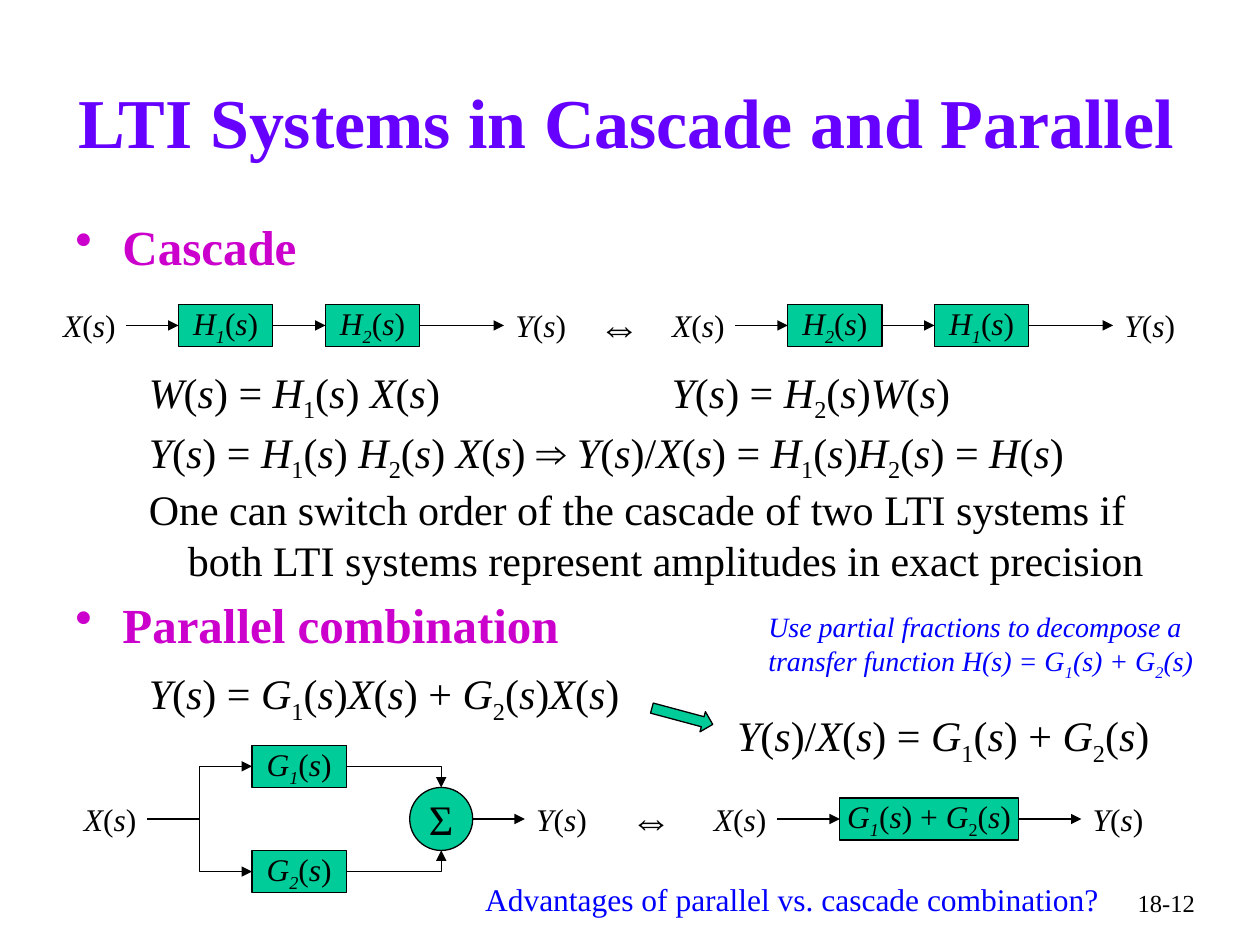
from dataclasses import dataclass
from itertools import groupby

from lxml import etree
from pptx import Presentation
from pptx.dml.color import RGBColor
from pptx.enum.shapes import MSO_CONNECTOR, MSO_SHAPE
from pptx.enum.text import MSO_ANCHOR, PP_ALIGN
from pptx.oxml.ns import qn
from pptx.util import Cm, Pt

RECT, OVAL, ARROW = MSO_SHAPE.RECTANGLE, MSO_SHAPE.OVAL, MSO_SHAPE.RIGHT_ARROW
LINE, ELBOW = MSO_CONNECTOR.STRAIGHT, MSO_CONNECTOR.ELBOW
LEFT, MID, RIGHT = PP_ALIGN.LEFT, PP_ALIGN.CENTER, PP_ALIGN.RIGHT
CORE = MSO_ANCHOR.MIDDLE
NORTH, WEST, SOUTH, EAST = range(4)


@dataclass(frozen=True)
class Theme:
    face: str = "Times New Roman"
    ink: str = "000000"
    title: str = "6600FF"
    head: str = "CC00CC"
    note: str = "0000FF"
    fill: str = "00CC99"
    huge: int = 40
    large: int = 28
    body: int = 24
    small: int = 18
    hint: int = 16
    page: int = 14
    rule: float = 0.75


T = Theme()
HIGH, WIDE, SIGN = 0.85, 1.9, 1.48


def rgb(code):
    return RGBColor.from_string(code)


def split(text, slant):
    """Yield (piece, italic, lowered): letters slant, digits are subscripts."""
    def style(c):
        return c.isalpha() or c in slant, c.isdigit()

    for (lean, low), part in groupby(text, style):
        yield "".join(part), lean, low


def write(shape, text, size, color=T.ink, bold=False, math=False, slant="",
          align=LEFT, wrap=True, anchor=None):
    frame = shape.text_frame
    frame.word_wrap = wrap
    if anchor is not None:
        frame.vertical_anchor = anchor
    para = frame.paragraphs[0]
    para.alignment = align
    parts = split(text, slant) if math else [(text, False, False)]
    for piece, lean, low in parts:
        run = para.add_run()
        run.text = piece
        look = {"name": T.face, "size": Pt(size), "bold": bold, "italic": lean}
        for key, value in look.items():
            setattr(run.font, key, value)
        run.font.color.rgb = rgb(color)
        if low:
            run.font._element.set("baseline", "-25000")
    return para


def block(slide, text, x, y, w, h, size, **look):
    box = slide.shapes.add_textbox(Cm(x), Cm(y), Cm(w), Cm(h))
    return write(box, text, size, **look)


def hang(para, size, left, back):
    """Give a paragraph a hanging indent and a fifth of a line above."""
    para.space_before = Pt(0.2 * size)
    props = para._p.get_or_add_pPr()
    props.set("marL", str(Cm(left)))
    props.set("indent", str(-Cm(back)))
    return props


def topic(slide, text, y):
    para = block(slide, text, 1.27, y, 11, 1.6, T.large, color=T.head, bold=True)
    props = hang(para, T.large, 0.95, 0.95)
    etree.SubElement(props, qn("a:buChar")).set("char", "•")


def claim(slide, text, y, x=1.48, w=22, h=1.48, math=True):
    para = block(slide, text, x, y, w, h, T.body, math=math)
    para.level = 1
    hang(para, T.body, 2.06, 0.79)


def solid(slide, kind, x, y, w, h):
    shape = slide.shapes.add_shape(kind, Cm(x), Cm(y), Cm(w), Cm(h))
    shape.shadow.inherit = False
    shape.fill.solid()
    shape.fill.fore_color.rgb = rgb(T.fill)
    shape.line.color.rgb = rgb(T.ink)
    shape.line.width = Pt(T.rule)
    return shape


def node(slide, text, x, mid, w=WIDE, h=HIGH, kind=RECT, size=T.small,
         math=True, slant="12"):
    shape = solid(slide, kind, x, mid - h / 2, w, h)
    write(shape, text, size, math=math, slant=slant, align=MID, wrap=False,
          anchor=CORE)
    return shape


def label(slide, text, x, mid, w=SIGN, size=T.small):
    box = slide.shapes.add_textbox(Cm(x), Cm(mid - HIGH / 2), Cm(w), Cm(HIGH))
    write(box, text, size, math=True, align=MID, wrap=False, anchor=CORE)
    box.text_frame.margin_left = box.text_frame.margin_right = 0
    return box


def link(slide, start, goal, out=EAST, into=WEST, kind=LINE):
    line = slide.shapes.add_connector(kind, 0, 0, 0, 0)
    line.begin_connect(start, out)
    line.end_connect(goal, into)
    line.line.color.rgb = rgb(T.ink)
    line.line.width = Pt(T.rule)
    props = line._element.spPr
    tip = etree.SubElement(props.find(qn("a:ln")), qn("a:tailEnd"))
    tip.set("type", "triangle")
    etree.SubElement(props, qn("a:effectLst"))
    return line


def resite(line, tag, site):
    """Name an oval's site: it has eight, so each side counts double."""
    line._element.find(".//" + qn(tag)).set("idx", str(2 * site))


def chain(slide, items):
    for start, goal in zip(items, items[1:]):
        link(slide, start, goal)


def cascade(slide, x, first, second, mid=6.56):
    chain(slide, [label(slide, "X(s)", x, mid),
                  node(slide, first, x + 2.54, mid),
                  node(slide, second, x + 5.5, mid),
                  label(slide, "Y(s)", x + 9.1, mid)])


def fork(slide, mid=16.51, gap=1.06):
    source = label(slide, "X(s)", 1.48, mid)
    total = node(slide, "Σ", 8.26, mid, 1.27, 1.27, OVAL, T.body, math=False)
    for text, step, side in (("G1(s)", -gap, NORTH), ("G2(s)", gap, SOUTH)):
        branch = node(slide, text, 5.08, mid + step)
        link(slide, source, branch, kind=ELBOW)
        bend = link(slide, branch, total, into=side, kind=ELBOW)
        bend._element.spPr.find(qn("a:prstGeom")).set("prst", "bentConnector2")
        resite(bend, "a:endCxn", side)
    out = link(slide, total, label(slide, "Y(s)", 10.58, mid))
    resite(out, "a:stCxn", EAST)


def merged(slide, mid=16.51):
    chain(slide, [label(slide, "X(s)", 14.18, mid),
                  node(slide, "G1(s) + G2(s)", 16.93, mid, w=3.6, slant="1"),
                  label(slide, "Y(s)", 21.8, mid)])


def main():
    deck = Presentation()
    deck.slide_width, deck.slide_height = Cm(25.4), Cm(19.05)
    slide = deck.slides.add_slide(deck.slide_layouts[6])

    block(slide, "LTI Systems in Cascade and Parallel ", 1.27, 0.84, 23.06, 3.18,
          T.huge, color=T.title, bold=True, align=MID, anchor=CORE)

    topic(slide, "Cascade", 4.24)
    cascade(slide, 1.06, "H1(s)", "H2(s)")
    cascade(slide, 13.34, "H2(s)", "H1(s)")
    claim(slide, "W(s) = H1(s) X(s)", 7.26, w=10)
    claim(slide, "Y(s) = H2(s)W(s)", 7.26, x=12.02, w=10)
    claim(slide, "Y(s) = H1(s) H2(s) X(s) ⇒ Y(s)/X(s) = H1(s)H2(s) = H(s)", 8.47)
    claim(slide, "One can switch order of the cascade of two LTI systems if both "
          "LTI systems represent amplitudes in exact precision", 9.63, h=2.33,
          math=False)

    topic(slide, "Parallel combination", 11.86)
    claim(slide, "Y(s) = G1(s)X(s) + G2(s)X(s)", 13.34, w=11.43)
    claim(slide, "Y(s)/X(s) = G1(s) + G2(s)", 14.18, x=13.34, w=10.37)
    solid(slide, ARROW, 13.12, 14.23, 1.27, 0.42).rotation = 15
    fork(slide)
    merged(slide)
    for x, mid in ((11.85, 6.56), (12.49, 16.51)):
        label(slide, "⇔", x, mid, 1.27, T.body)

    hint = ("Use partial fractions to decompose a transfer function "
            "H(s) = G1(s) + G2(s)")
    block(slide, hint, 15.24, 12.17, 9.53, 1.62, T.hint, color=T.note, math=True,
          slant=hint)
    block(slide, "Advantages of parallel vs. cascade combination?", 9.53, 17.62,
          13.34, 1.02, T.small, color=T.note)
    block(slide, "18-12", 19.05, 17.78, 5.29, 1.27, T.page, align=RIGHT)
    deck.save("out.pptx")


if __name__ == "__main__":
    main()
